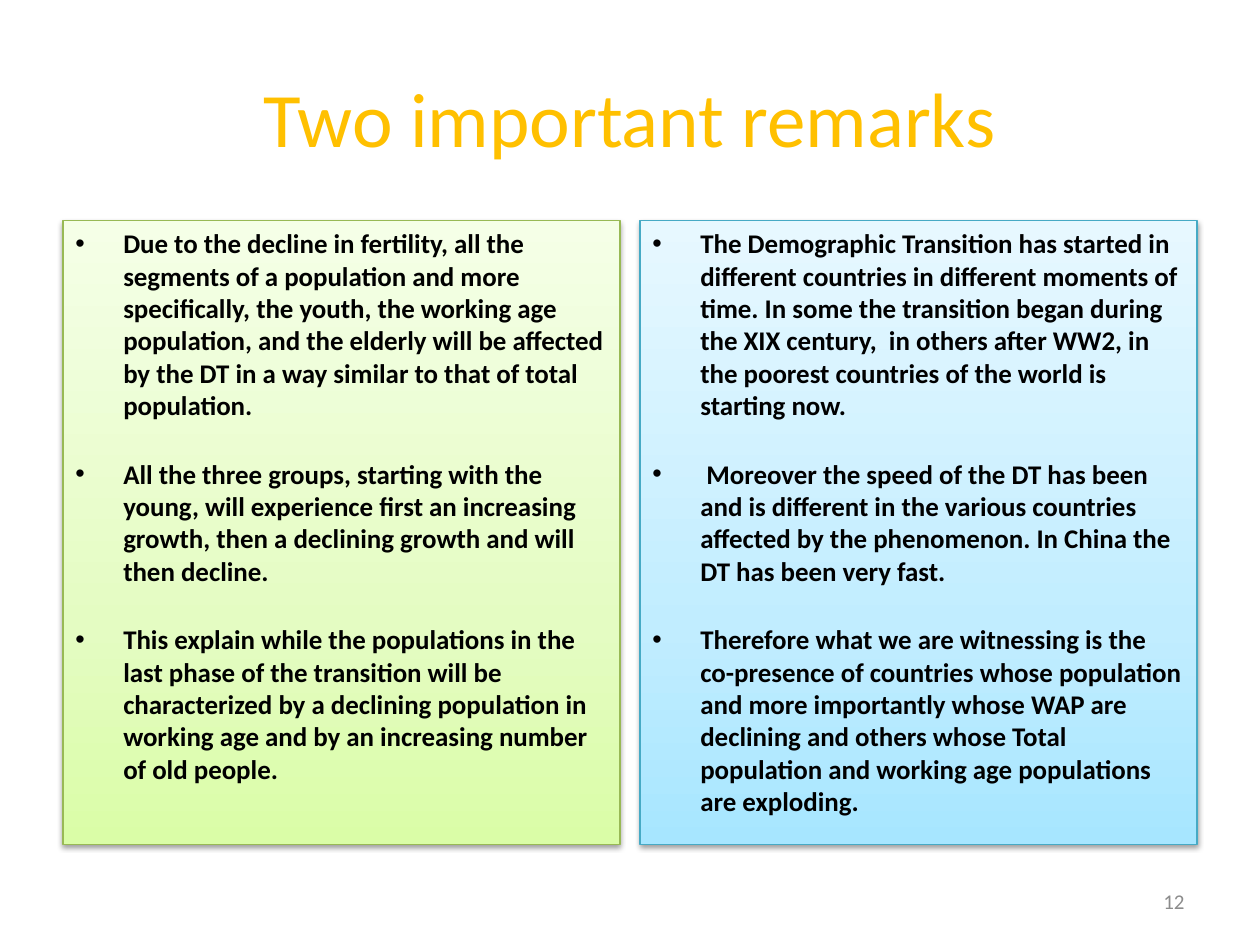
from lxml.etree import SubElement as Sub
from pptx import Presentation
from pptx.dml.color import RGBColor
from pptx.enum.shapes import MSO_SHAPE as Shape
from pptx.enum.text import MSO_ANCHOR as Anchor, PP_ALIGN as Align
from pptx.oxml.ns import qn
from pptx.util import Inches, Pt

WIDE, HIGH = 10, 7.5
EDGE, GAP = 0.5, 0.16
COL = (WIDE - 2 * EDGE - GAP) / 2

LEFT = [
    "Due to the decline in fertility, all the segments of a population and more "
    "specifically, the youth, the working age population, and the elderly will be "
    "affected by the DT in a way similar to that of total population.",
    "All the three groups, starting with the young, will experience first an "
    "increasing growth, then a declining growth and will then decline.",
    "This explain while the populations in the last phase of the transition will be "
    "characterized by a declining population in working age and by an increasing "
    "number of old people.",
]
RIGHT = [
    "The Demographic Transition has started in different countries in different "
    "moments of time. In some the transition began during the XIX century,  in "
    "others after WW2, in the poorest countries of the world is starting now.",
    " Moreover the speed of the DT has been and is different in the various "
    "countries affected by the phenomenon. In China the DT has been very fast.",
    "Therefore what we are witnessing is the co-presence of countries whose "
    "population and more importantly whose WAP are declining and others whose Total "
    "population and working age populations are exploding.",
]
# Text, outline and gradient colours (bottom to top) of each panel
PANELS = [
    (LEFT, "98B955", ["DAFDA7", "E4FCC2", "F5FFE7"]),
    (RIGHT, "46AAC5", ["A7E6FF", "C1EDFF", "E7F8FF"]),
]
STOPS = [0, 35, 100]
BODY = {"space_before": Pt(6.4), "space_after": Pt(14.2),
        "line_spacing": Pt(18.5), "alignment": Align.LEFT}


def tint(code):
    return RGBColor.from_string(code)


def write(para, text, size, color, bold=False):
    run = para.add_run()
    run.text = text
    look = {"name": "Calibri", "size": Pt(size), "bold": bold}
    for key, val in look.items():
        setattr(run.font, key, val)
    run.font.color.rgb = tint(color)


def label(slide, box, text, size, color, align):
    frame = slide.shapes.add_textbox(*map(Inches, box)).text_frame
    frame.word_wrap = True
    frame.vertical_anchor = Anchor.MIDDLE
    para = frame.paragraphs[0]
    para.alignment = align
    write(para, text, size, color)


def shade(shape, colors):
    """Three-stop gradient that runs upward."""
    shape.fill.gradient()
    shape.fill.gradient_angle = 90
    stops = next(shape.element.spPr.iter(qn("a:gsLst")))
    for old in list(stops):
        stops.remove(old)
    for pos, code in zip(STOPS, colors):
        stop = Sub(stops, qn("a:gs"), pos=str(pos * 1000))
        Sub(stop, qn("a:srgbClr"), val=code)


def lift(shape):
    """Soft shadow below the shape."""
    shape.shadow.inherit = False
    effect = shape.element.spPr.find(qn("a:effectLst"))
    drop = Sub(effect, qn("a:outerShdw"), blurRad=str(Pt(3.1)),
               dist=str(Pt(1.6)), dir="5400000", rotWithShape="0")
    black = Sub(drop, qn("a:srgbClr"), val="000000")
    Sub(black, qn("a:alpha"), val="38000")


def bullet(para):
    props = para._p.get_or_add_pPr()
    props.set("marL", str(Inches(0.38)))
    props.set("indent", str(Inches(-0.38)))
    Sub(props, qn("a:buFont"), typeface="Arial")
    Sub(props, qn("a:buChar"), char="•")


def panel(slide, box, texts, edge, colors):
    rect = slide.shapes.add_shape(Shape.RECTANGLE, *map(Inches, box))
    shade(rect, colors)
    rect.line.color.rgb = tint(edge)
    rect.line.width = Pt(0.75)
    lift(rect)
    frame = rect.text_frame
    frame.word_wrap = True
    frame.vertical_anchor = Anchor.TOP
    for i, text in enumerate(texts):
        para = frame.add_paragraph() if i else frame.paragraphs[0]
        for key, val in BODY.items():
            setattr(para, key, val)
        bullet(para)
        write(para, text, 15.4, "000000", True)


def main():
    deck = Presentation()
    deck.slide_width, deck.slide_height = Inches(WIDE), Inches(HIGH)
    slide = deck.slides.add_slide(deck.slide_layouts[6])
    # Title
    label(slide, (EDGE, 0.3, WIDE - 2 * EDGE, 1.25),
          "Two important remarks", 44, "FFC000", Align.CENTER)
    # Two columns
    for i, parts in enumerate(PANELS):
        panel(slide, (EDGE + i * (COL + GAP), 1.75, COL, 4.95), *parts)
    # Page number
    label(slide, (WIDE - EDGE - 2.33, 6.95, 2.33, 0.4),
          "12", 12, "8C8C8C", Align.RIGHT)
    deck.save("out.pptx")


if __name__ == "__main__":
    main()
